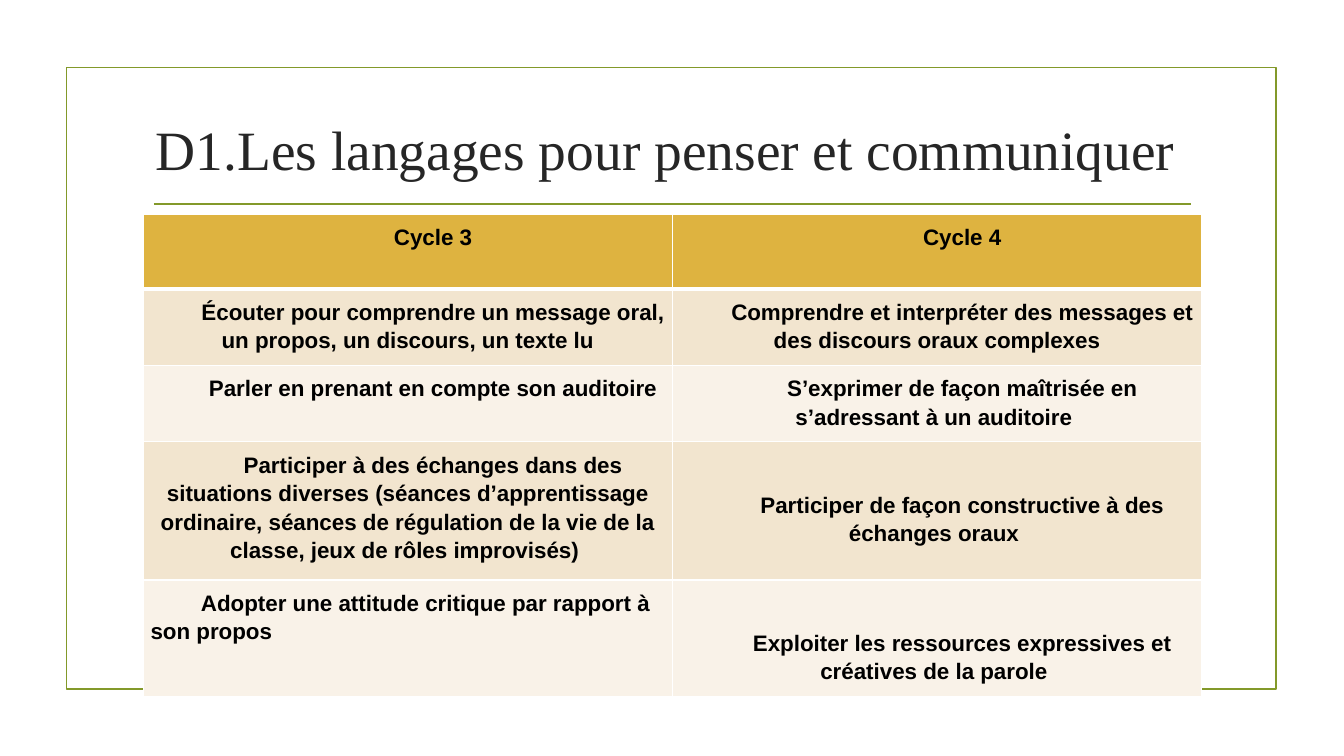
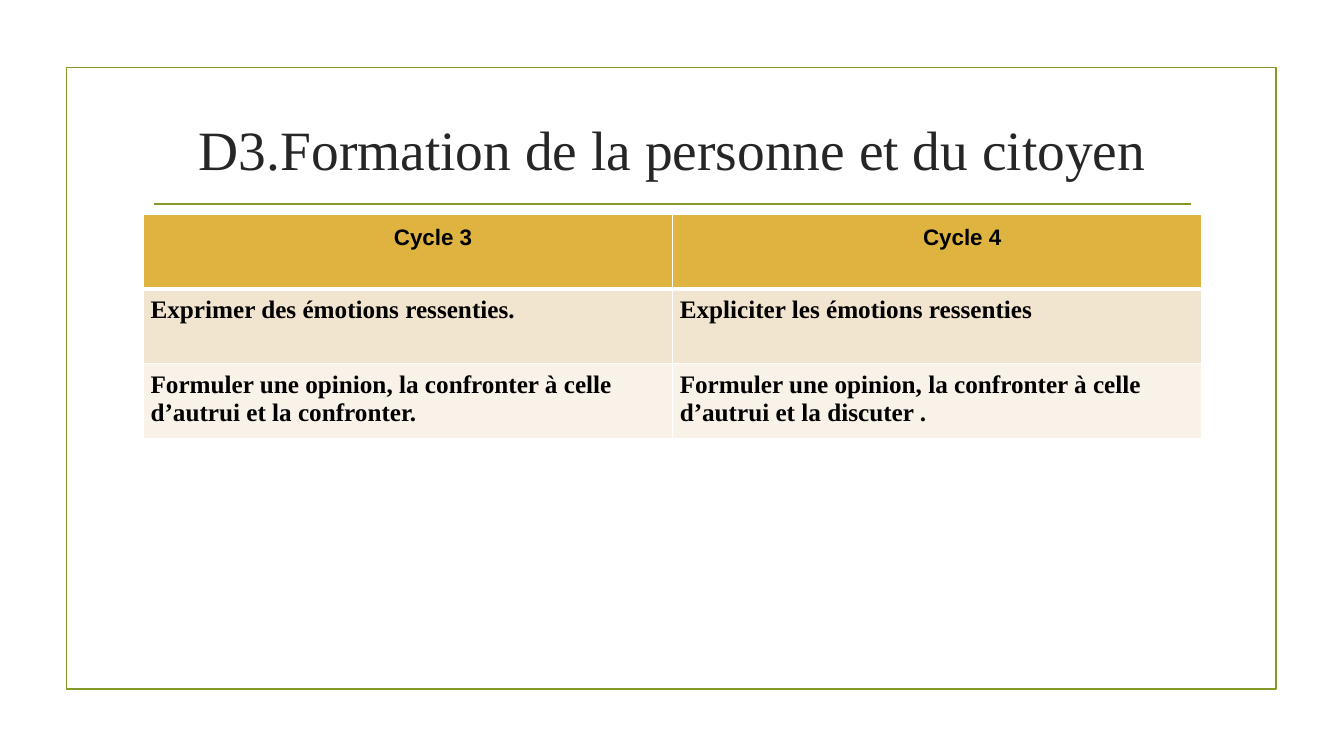
from lxml import etree
from pptx import Presentation
from pptx import util as u
from pptx.dml.color import RGBColor
from pptx.enum import shapes, text
from pptx.oxml.ns import qn

Pt = u.Pt

# Shared look
GREEN, INK, BLACK, WHITE = "83992A", "262626", "000000", "FFFFFF"
HEADER, BANDS = "DEB340", ("F2E5CF", "F9F2E8")
SERIF, SANS = "Times New Roman", "Arial"
LEFT, WIDTH = 102.3, 756
ROW_H, INSET, INDENT = 53.3, 5.25, 36
LOWERED = INSET + 28.6  # top inset of cells whose text starts lower
CENTER, START = text.PP_ALIGN.CENTER, text.PP_ALIGN.LEFT

# Content: a cell is a text, or a text with its own layout settings
HEADINGS = ("Cycle 3", "Cycle 4")
LANGUAGES = [
    ("Écouter pour comprendre un message oral, un propos, un discours, un texte lu",
     "Comprendre et interpréter des messages et des discours oraux complexes"),
    ("Parler en prenant en compte son auditoire",
     "S’exprimer de façon maîtrisée en s’adressant à un auditoire "),
    ("Participer à des échanges dans des situations diverses (séances "
     "d’apprentissage ordinaire, séances de régulation de la vie de la classe, "
     "jeux de rôles improvisés) ",
     ("Participer de façon constructive à des échanges oraux ", {"top": LOWERED})),
    (("Adopter une attitude critique par rapport à son propos", {"align": START}),
     ("Exploiter les ressources expressives et créatives de la parole ",
      {"top": LOWERED})),
]
CITIZEN = [
    ("Exprimer des émotions ressenties.", "Expliciter les émotions ressenties"),
    ("Formuler une opinion, la confronter à celle d’autrui et la confronter.",
     "Formuler une opinion, la confronter à celle d’autrui et la discuter ."),
]
INDENTED = {"font": SANS, "size": 16, "align": CENTER, "indent": INDENT, "spacing": 1.15}
PLAIN = {"font": SERIF, "size": 18, "align": START, "indent": 0, "spacing": 1}


def rgb(value):
    return RGBColor.from_string(value)


def set_font(p, name, size, color, bold=False):
    for r in p.runs:
        r.font.name, r.font.size, r.font.bold = name, Pt(size), bold
        r.font.color.rgb = rgb(color)


def add_frame(s):
    sp = s.shapes.add_shape(shapes.MSO_SHAPE.RECTANGLE,
                            Pt(47.5), Pt(48.2), Pt(864), Pt(444.2))
    sp.shadow.inherit = False
    sp.fill.background()
    sp.line.color.rgb, sp.line.width = rgb(GREEN), Pt(1.25)


def add_rule(s):
    line = s.shapes.add_connector(shapes.MSO_CONNECTOR.STRAIGHT,
                                  Pt(110), Pt(145.5), Pt(850.5), Pt(145.5))
    line.line.color.rgb, line.line.width = rgb(GREEN), Pt(1.25)
    etree.SubElement(line._element.spPr, qn("a:effectLst"))


def add_title(s, title):
    tf = s.shapes.add_textbox(Pt(LEFT), Pt(77), Pt(WIDTH), Pt(58.3)).text_frame
    tf.word_wrap = True
    tf.margin_left = tf.margin_right = 0
    tf.vertical_anchor = text.MSO_ANCHOR.MIDDLE
    tf.text = title
    p = tf.paragraphs[0]
    p.alignment = CENTER
    set_font(p, SERIF, 39.6, INK)


def set_borders(cell, top, bottom):
    tcPr = cell._tc.get_or_add_tcPr()
    for side, width in (("L", 1), ("R", 1), ("T", top), ("B", bottom)):
        ln = etree.SubElement(tcPr, qn(f"a:ln{side}"), w=str(Pt(width)))
        fill = etree.SubElement(ln, qn("a:solidFill"))
        etree.SubElement(fill, qn("a:srgbClr"), val=WHITE)


def fill_cell(cell, content, style, fill):
    words, extra = content if isinstance(content, tuple) else (content, {})
    style = {"top": INSET, **style, **extra}
    cell.fill.solid()
    cell.fill.fore_color.rgb = rgb(fill)
    cell.margin_left = cell.margin_right = cell.margin_bottom = Pt(INSET)
    cell.margin_top = Pt(style["top"])
    cell.text = words
    p = cell.text_frame.paragraphs[0]
    p._p.get_or_add_pPr().set("indent", str(Pt(style["indent"])))
    p.alignment, p.line_spacing = style["align"], style["spacing"]
    set_font(p, style["font"], style["size"], BLACK, bold=True)


def add_comparison(s, rows, style):
    rows = [HEADINGS] + rows
    table = s.shapes.add_table(len(rows), len(HEADINGS), Pt(LEFT), Pt(153),
                               Pt(WIDTH), Pt(ROW_H * len(rows))).table
    table.first_row = table.horz_banding = False
    for i, row in enumerate(rows):
        table.rows[i].height = Pt(ROW_H)
        for j, content in enumerate(row):
            cell = table.cell(i, j)
            # The line under the headings is thicker
            set_borders(cell, top=3 if i == 1 else 1, bottom=3 if i == 0 else 1)
            fill_cell(cell, content, style if i else INDENTED,
                      BANDS[(i - 1) % 2] if i else HEADER)


def add_slide(prs, title, rows, style):
    s = prs.slides.add_slide(prs.slide_layouts[6])
    add_frame(s)
    add_rule(s)
    add_title(s, title)
    add_comparison(s, rows, style)


def main():
    prs = Presentation()
    prs.slide_width, prs.slide_height = Pt(960), Pt(540)
    add_slide(prs, "D1.Les langages pour penser et communiquer ", LANGUAGES, INDENTED)
    add_slide(prs, "D3.Formation de la personne et du citoyen", CITIZEN, PLAIN)
    prs.save("out.pptx")


if __name__ == "__main__":
    main()
